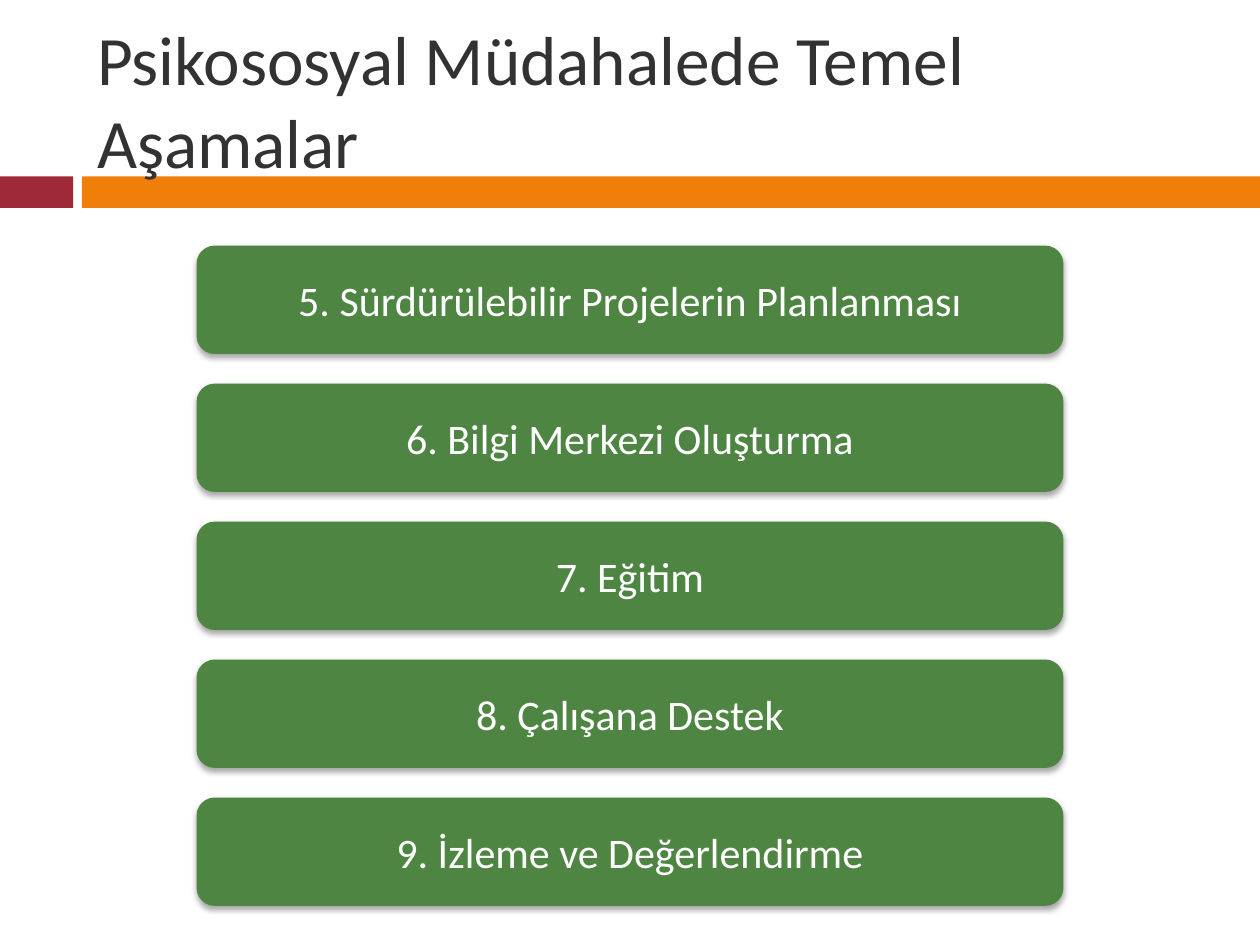
import pptx
import pptx.enum.shapes
import pptx.enum.text
import pptx.oxml
import pptx.oxml.ns
import pptx.util
from pptx.dml.color import RGBColor
from pptx.util import Inches

COLORS = {
    "red": "9F2936",
    "orange": "F07F09",
    "green": "4E8542",
    "heading": "323232",
    "white": "FFFFFF",
    "shadow": "000000",
}
SHAPES = pptx.enum.shapes.MSO_SHAPE
ALIGN = pptx.enum.text.PP_ALIGN

HEADING = "Psikososyal Müdahalede Temel Aşamalar"
STAGES = [
    "5. Sürdürülebilir Projelerin Planlanması",
    "6. Bilgi Merkezi Oluşturma",
    "7. Eğitim",
    "8. Çalışana Destek",
    "9. İzleme ve Değerlendirme",
]
HEADING_FONT = {"name": "Calibri", "size": pptx.util.Pt(39.6), "bold": False}
STAGE_FONT = {"name": "Calibri", "size": pptx.util.Pt(24), "bold": False}
FRAME = {
    "word_wrap": True,
    "auto_size": pptx.enum.text.MSO_AUTO_SIZE.NONE,
    "vertical_anchor": pptx.enum.text.MSO_ANCHOR.MIDDLE,
}


def apply(target, values):
    for attribute, value in values.items():
        setattr(target, attribute, value)


def write(shape, text, font, color, align):
    shape.text_frame.text = text
    apply(shape.text_frame, FRAME)
    paragraph = shape.text_frame.paragraphs[0]
    paragraph.alignment = align
    run = paragraph.runs[0]
    apply(run.font, font)
    run.font.color.rgb = RGBColor.from_string(COLORS[color])


def add_block(slide, kind, left, top, width, height, color):
    block = slide.shapes.add_shape(
        kind, Inches(left), Inches(top), Inches(width), Inches(height))
    block.shadow.inherit = False
    block.fill.solid()
    block.fill.fore_color.rgb = RGBColor.from_string(COLORS[color])
    block.line.fill.background()
    return block


def add_soft_shadow(block):
    effects = block._element.spPr.find(pptx.oxml.ns.qn("a:effectLst"))
    effects.append(pptx.oxml.parse_xml(
        f'<a:outerShdw {pptx.oxml.ns.nsdecls("a")} blurRad="38100" dist="25400" '
        f'dir="5400000" rotWithShape="0"><a:srgbClr val="{COLORS["shadow"]}">'
        '<a:alpha val="35000"/></a:srgbClr></a:outerShdw>'))


def add_divider(slide, left, top, width, height):
    accent, gap = 0.58, 0.07
    band = accent + gap
    add_block(slide, SHAPES.RECTANGLE, left, top, accent, height, "red")
    add_block(slide, SHAPES.RECTANGLE, left + band, top, width - band, height, "orange")


def place_heading(slide, left, top, width, height):
    heading = slide.shapes.title
    apply(heading, {"left": Inches(left), "top": Inches(top),
                    "width": Inches(width), "height": Inches(height)})
    write(heading, HEADING, HEADING_FONT, "heading", ALIGN.LEFT)
    # The heading's descenders overlap the divider, so it goes in front
    slide.shapes._spTree.append(heading._element)


def add_stages(slide, left, top, width, height):
    stage_height = 0.86
    pitch = (height - stage_height) / (len(STAGES) - 1)
    for index, text in enumerate(STAGES):
        stage = add_block(slide, SHAPES.FLOWCHART_ALTERNATE_PROCESS,
                          left, top + index * pitch, width, stage_height, "green")
        add_soft_shadow(stage)
        write(stage, text, STAGE_FONT, "white", ALIGN.CENTER)


def main():
    deck = pptx.Presentation()
    apply(deck, {"slide_width": Inches(10), "slide_height": Inches(7.5)})
    slide = deck.slides.add_slide(deck.slide_layouts[5])
    slide.background.fill.solid()
    slide.background.fill.fore_color.rgb = RGBColor.from_string(COLORS["white"])

    # Divider band and heading
    add_divider(slide, 0, 1.4, 10, 0.25)
    place_heading(slide, 0.67, 0.25, 8.92, 1.08)

    # Evenly spaced stages
    add_stages(slide, 1.56, 1.95, 6.88, 5.24)

    deck.save("out.pptx")


if __name__ == "__main__":
    main()
